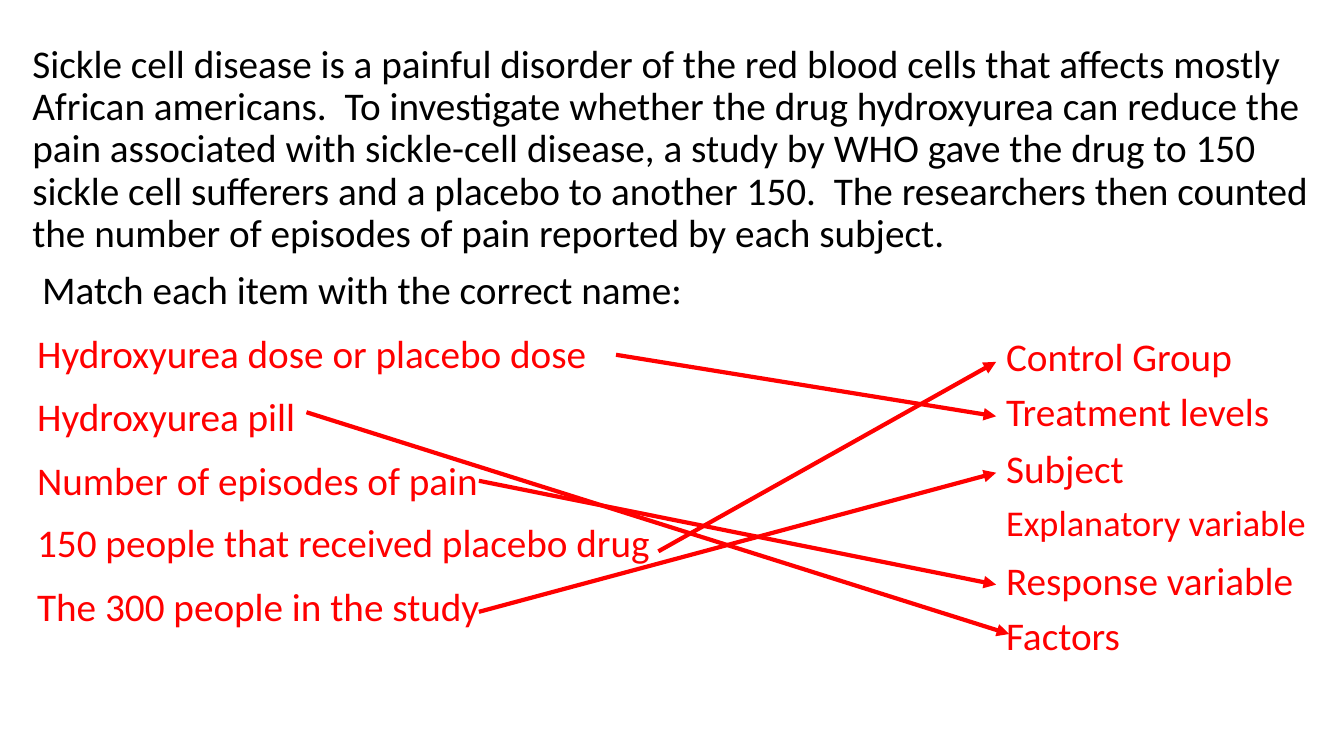
from lxml.etree import SubElement
from pptx import Presentation
from pptx.dml.color import RGBColor
from pptx.enum.shapes import MSO_CONNECTOR as CONN
from pptx.enum.text import MSO_ANCHOR as ANCHOR, MSO_AUTO_SIZE as FIT, PP_ALIGN as ALIGN
from pptx.oxml.ns import qn
from pptx.util import Emu, Pt

PX = 9144  # EMU per px, 100 px to the inch
FONT = "Calibri"
COLORS = {"text": "000000", "match": "FF0000", "back": "FFFFFF"}

STORY = (
    "Sickle cell disease is a painful disorder of the red blood cells that affects "
    "mostly African americans.  To investigate whether the drug hydroxyurea can reduce "
    "the pain associated with sickle-cell disease, a study by WHO gave the drug to 150 "
    "sickle cell sufferers and a placebo to another 150.  The researchers then counted "
    "the number of episodes of pain reported by each subject."
)
PROMPT = "Match each item with the correct name:"
ITEMS = [
    "Hydroxyurea dose or placebo dose",
    "Hydroxyurea pill",
    "Number of episodes of pain",
    "150 people that received placebo drug",
    "The 300 people in the study",
]
NAMES = [
    ("Control Group", 28),
    ("Treatment levels", 28),
    ("Subject", 28),
    ("Explanatory variable", 25.9),
    ("Response variable", 28),
    ("Factors", 28),
]
# Arrow ends in px: from an item to its name
MATCHES = [
    ((611, 352), (988, 413)),
    ((304, 409), (1001, 629)),
    ((475, 477), (988, 580)),
    ((653, 547), (988, 359)),
    ((475, 607), (988, 469)),
]


def px(n):
    return Emu(n * PX)


def rgb(name):
    return RGBColor.from_string(COLORS[name])


def write(tf, text, color, size=28):
    tf.text = text
    tf.word_wrap = True
    tf.auto_size = FIT.NONE
    tf.vertical_anchor = ANCHOR.TOP
    p = tf.paragraphs[0]
    p.alignment = ALIGN.LEFT
    p.line_spacing = 0.9
    p.space_before = Pt(10)
    font = p.runs[0].font
    font.name, font.size = FONT, Pt(size)
    font.color.rgb = rgb(color)
    return p


def add_label(s, text, x, y, w, h=55, color="match", size=28):
    sp = s.shapes.add_textbox(px(x), px(y), px(w), px(h))
    write(sp.text_frame, text, color, size)


def add_story(s, x, y, w, h):
    sp = s.placeholders[1]
    sp.left, sp.top, sp.width, sp.height = px(x), px(y), px(w), px(h)
    p = write(sp.text_frame, STORY, "text")
    # Plain paragraph without bullet or hanging indent
    pPr = p._p.get_or_add_pPr()
    pPr.set("marL", "0")
    pPr.set("indent", "0")
    SubElement(pPr, qn("a:buNone"))


def add_column(s, labels, x, y, w, pitch):
    for i, (text, size) in enumerate(labels):
        add_label(s, text, x, y + round(i * pitch), w, size=size)


def add_arrow(s, start, end):
    line = s.shapes.add_connector(CONN.STRAIGHT, *map(px, start + end))
    line.line.color.rgb = rgb("match")
    line.line.width = Pt(3)
    SubElement(line.line._get_or_add_ln(), qn("a:tailEnd"), type="triangle")
    SubElement(line._element.spPr, qn("a:effectLst"))


def build_slide(prs):
    s = prs.slides.add_slide(prs.slide_layouts[1])
    s.background.fill.solid()
    s.background.fill.fore_color.rgb = rgb("back")
    title = s.shapes.title._element
    title.getparent().remove(title)

    # Study description and prompt
    add_story(s, 22, 39, 1312, 281)
    add_label(s, PROMPT, 32, 264, 680, color="text")

    # Items on the left, names on the right
    add_column(s, [(item, 28) for item in ITEMS], 27, 327, 680, 62.75)
    add_column(s, NAMES, 988, 330, 325, 55.4)

    # Answer arrows
    for start, end in MATCHES:
        add_arrow(s, start, end)


def main():
    prs = Presentation()
    prs.slide_width, prs.slide_height = px(1333), px(750)
    build_slide(prs)
    prs.save("out.pptx")


if __name__ == "__main__":
    main()
